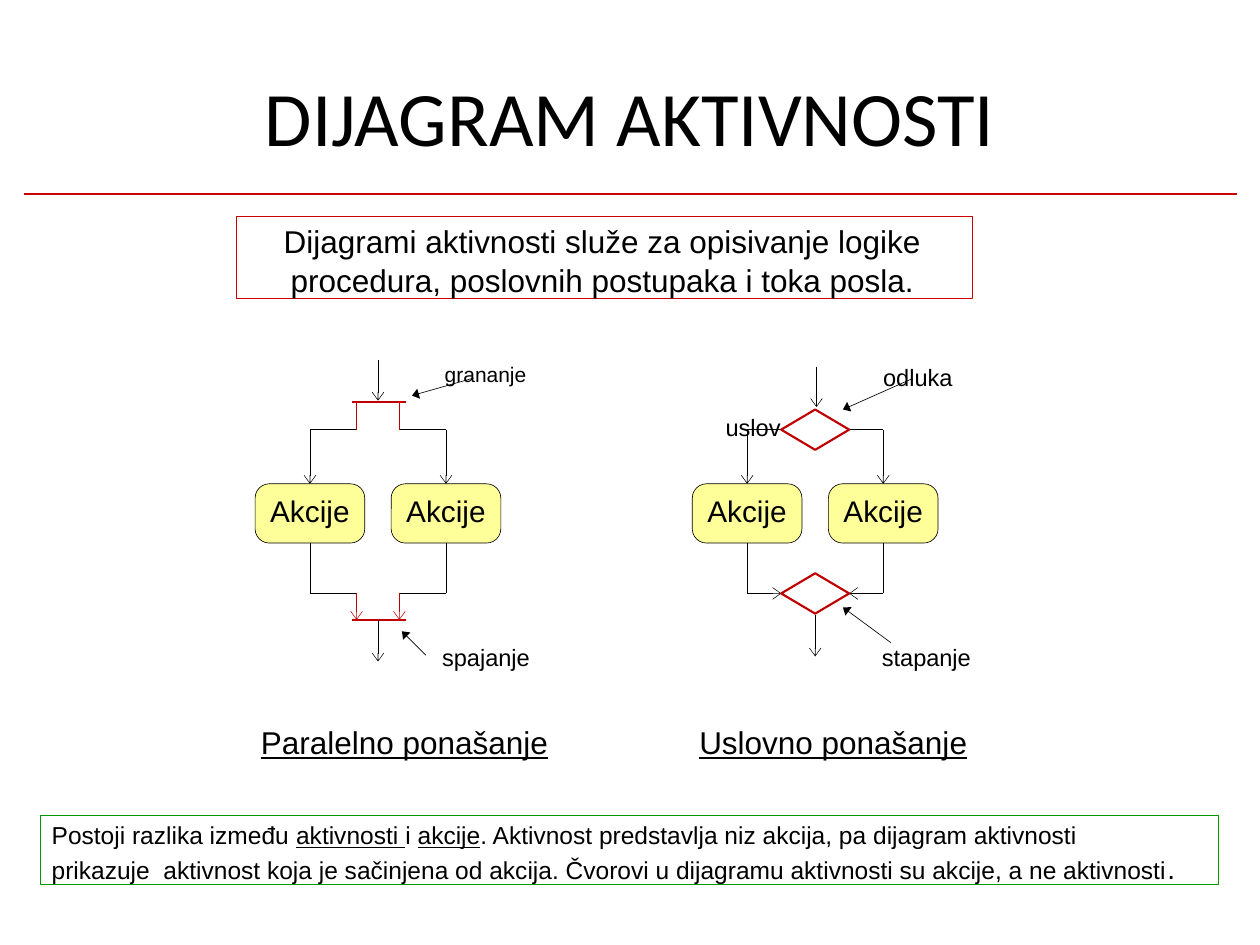
from lxml import etree
from pptx import Presentation
from pptx.dml.color import RGBColor
from pptx.enum.shapes import MSO_CONNECTOR as CONN, MSO_SHAPE as SHAPE
from pptx.enum.text import MSO_ANCHOR as ANCHOR, PP_ALIGN as ALIGN
from pptx.oxml.ns import qn
from pptx.util import Inches, Pt

BLACK, RED, DARK_RED, GREEN, YELLOW = "000000", "CC0000", "C00000", "009900", "FFFF99"
hex_color = RGBColor.from_string


def add_line(x1, y1, x2, y2, color=BLACK, width=0.38, head=None):
    c = s.shapes.add_connector(CONN.STRAIGHT, Inches(x1), Inches(y1), Inches(x2), Inches(y2))
    c.line.color.rgb = hex_color(color)
    c.line.width = Pt(width)
    if head:
        etree.SubElement(c.line._get_or_add_ln(), qn("a:tailEnd"), type=head, w="med", len="sm")
    etree.SubElement(c._element.spPr, qn("a:effectLst"))


def add_box(shape, x, y, w, h, lines=(), size=18, align=ALIGN.CENTER,
            line=None, width=0.72, fill=None, insets=(0, 0, 0, 0), anchor=ANCHOR.TOP):
    """Each line is a list of (text, underlined) runs."""
    at = [Inches(v) for v in (x, y, w, h)]
    sp = s.shapes.add_shape(shape, *at) if shape else s.shapes.add_textbox(*at)
    if shape:
        sp.shadow.inherit = False
        sp.line.color.rgb = hex_color(line)
        sp.line.width = Pt(width)
        if fill:
            sp.fill.solid()
            sp.fill.fore_color.rgb = hex_color(fill)
        else:
            sp.fill.background()
    tf = sp.text_frame
    tf.word_wrap = True
    tf.vertical_anchor = anchor
    tf.margin_left, tf.margin_top, tf.margin_right, tf.margin_bottom = map(Inches, insets)
    for i, runs in enumerate(lines):
        p = tf.add_paragraph() if i else tf.paragraphs[0]
        p.alignment = align
        p.space_after = Pt(1)
        p.font.name, p.font.size = "Arial", Pt(size)
        p.font.color.rgb = hex_color(BLACK)
        for text, underlined in runs:
            r = p.add_run()
            r.text = text
            if underlined:
                r.font.underline = True
    return sp


prs = Presentation()
prs.slide_width, prs.slide_height = Inches(10), Inches(7.5)
s = prs.slides.add_slide(prs.slide_layouts[5])

# Title and rule
title = s.shapes.title
title.left, title.top, title.width, title.height = map(Inches, (0.5, 0.55, 9, 0.74))
tf = title.text_frame
tf.text = "DIJAGRAM AKTIVNOSTI"
tf.vertical_anchor = ANCHOR.MIDDLE
tf.margin_left = tf.margin_top = tf.margin_right = tf.margin_bottom = 0
p = tf.paragraphs[0]
p.alignment = ALIGN.CENTER
p.font.name, p.font.size = "Calibri", Pt(44)
p.font.color.rgb = hex_color(BLACK)
add_line(0.19, 1.54, 9.82, 1.54, RED, 0.96)

# Definition
add_box(SHAPE.RECTANGLE, 1.88, 1.72, 5.84, 0.65,
        [[("Dijagrami aktivnosti služe za opisivanje logike", False)],
         [("procedura, poslovnih postupaka i toka posla.", False)]],
        line=RED, insets=(0, 0.04, 0.04, 0))

# Both diagrams: two branches, each through one action
SPLIT_Y, ACTION_Y, ACTION_END, MERGE_Y = 3.41, 3.84, 4.31, 4.71
BRANCH_GAP, ACTION_W = 1.08, 0.87
for left, inner_gap, merge_head in ((2.46, 0.37, None), (5.93, 0.27, "arrow")):
    right = left + BRANCH_GAP
    for x, inner in ((left, left + inner_gap), (right, right - inner_gap)):
        add_line(inner, SPLIT_Y, x, SPLIT_Y)
        add_line(x, SPLIT_Y, x, ACTION_Y, head="arrow")
        add_box(SHAPE.ROUNDED_RECTANGLE, x - ACTION_W / 2, ACTION_Y, ACTION_W,
                ACTION_END - ACTION_Y, [[("Akcije", False)]], size=17, line=BLACK,
                width=0.38, fill=YELLOW, insets=(0, 0, 0, 0.05),
                anchor=ANCHOR.MIDDLE).adjustments[0] = 0.24
        add_line(x, ACTION_END, x, MERGE_Y)
        add_line(x, MERGE_Y, inner, MERGE_Y, head=merge_head)

# Fork and join bars
FORK_Y, JOIN_Y = 3.19, 4.92
for y in (FORK_Y, JOIN_Y):
    add_line(2.79, y, 3.22, y, DARK_RED, 1.21)
for x in (2.83, 3.17):
    add_line(x, FORK_Y, x, SPLIT_Y, DARK_RED)
    add_line(x, MERGE_Y, x, JOIN_Y, DARK_RED, head="arrow")

# Decision and merge diamonds
for y in (SPLIT_Y, MERGE_Y):
    add_box(SHAPE.DIAMOND, 6.2, y - 0.16, 0.54, 0.32, line=DARK_RED, width=1.22)

# Entry and exit arrows
for x, y1, y2 in ((3, 2.86, 3.18), (3, 4.92, 5.25), (6.48, 2.91, 3.23), (6.47, 4.88, 5.21)):
    add_line(x, y1, x, y2, head="arrow")

# Pointers from the labels
for ends in ((3.76, 3, 3.27, 3.14), (3.38, 5.2, 3.19, 5.01),
             (7.23, 3.01, 6.69, 3.25), (7.07, 5.1, 6.69, 4.82)):
    add_line(*ends, head="triangle")

# Labels
for text, x, y, size in (("grananje", 3.53, 2.87, 12), ("spajanje", 3.51, 5.1, 13.5),
                         ("odluka", 7.01, 2.88, 13.5), ("uslov", 5.76, 3.28, 13.5),
                         ("stapanje", 7, 5.1, 13.5)):
    add_box(None, x, y, 0.8, 0.23, [[(text, False)]], size, ALIGN.LEFT)

# Diagram captions
for text, x in (("Paralelno ponašanje", 2.07), ("Uslovno ponašanje", 5.55)):
    add_box(None, x, 5.74, 2.4, 0.31, [[(text, True)]], align=ALIGN.LEFT)

# Note on activities and actions
note = add_box(SHAPE.RECTANGLE, 0.32, 6.47, 9.35, 0.55,
               [[("Postoji razlika između ", False), ("aktivnosti ", True), ("i ", False),
                 ("akcije", True),
                 (". Aktivnost predstavlja niz akcija, pa dijagram aktivnosti ", False)],
                [("prikazuje  aktivnost koja je sačinjena od akcija. "
                  "Čvorovi u dijagramu aktivnosti su akcije, a ne aktivnosti", False),
                 (".", False)]],
               size=14, align=ALIGN.LEFT, line=GREEN, insets=(0.09, 0.04, 0, 0))
note.text_frame.paragraphs[1].runs[-1].font.size = Pt(16)

prs.save("out.pptx")
